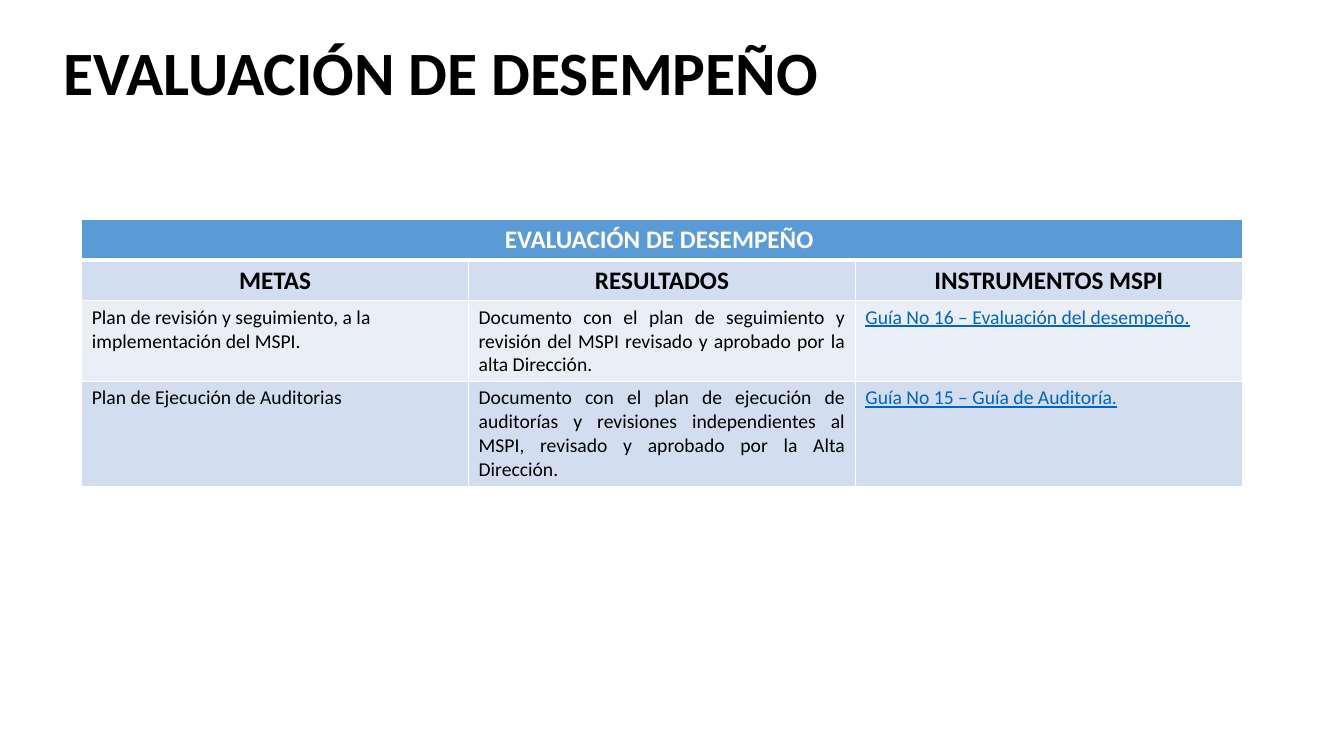
import pptx
import pptx.util
import pptx.dml.color
import pptx.enum.text
import pptx.oxml
import pptx.oxml.ns

ALIGN = pptx.enum.text.PP_ALIGN
COLORS = {
    "black": "000000",
    "white": "FFFFFF",
    "blue": "5B9BD5",
    "mid": "D2DEEF",
    "pale": "EAEFF7",
    "link": "0563C1",
}
HEAD = "EVALUACIÓN DE DESEMPEÑO"
ROWS = [
    [HEAD + " ", "", ""],
    ["METAS", "RESULTADOS", "INSTRUMENTOS MSPI"],
    [
        "Plan de revisión y seguimiento, a la implementación del MSPI.",
        "Documento con el plan de seguimiento y revisión del MSPI revisado y aprobado por la alta Dirección.",
        "Guía No 16 – Evaluación del desempeño.",
    ],
    [
        "Plan de Ejecución de Auditorias",
        "Documento con el plan de ejecución de auditorías y revisiones independientes al MSPI, "
        "revisado y aprobado por la Alta Dirección.",
        "Guía No 15 – Guía de Auditoría.",
    ],
]
FILLS = ["blue", "mid", "pale", "mid"]
HEIGHTS = [5.2, 5.2, 10.67, 14]


class Deck:
    def __init__(self, width, height):
        self.file = pptx.Presentation()
        self.file.slide_width = pptx.util.Inches(width)
        self.file.slide_height = pptx.util.Inches(height)
        self.slide = self.file.slides.add_slide(self.file.slide_layouts[6])
        self.font = "Calibri"

    def col(self, share):
        return round(self.file.slide_width * share / 100)

    def row(self, share):
        return round(self.file.slide_height * share / 100)

    def area(self, left, top, width, height):
        return self.col(left), self.row(top), self.col(width), self.row(height)

    def color(self, name):
        return pptx.dml.color.RGBColor.from_string(COLORS[name])

    def label(self, frame, text, size, color, bold=False, line=False, align=ALIGN.LEFT):
        frame.text = text
        para = frame.paragraphs[0]
        para.alignment = align
        for run in para.runs:
            run.font.name = self.font
            run.font.size = pptx.util.Pt(size)
            run.font.bold = bold
            run.font.underline = line
            run.font.color.rgb = self.color(color)

    def title(self, text, *place):
        frame = self.slide.shapes.add_textbox(*self.area(*place)).text_frame
        frame.word_wrap = True
        self.label(frame, text, 44, "black", bold=True)
        frame.paragraphs[0].line_spacing = 0.9

    def border(self, cell, side, width):
        space = pptx.oxml.ns.nsdecls("a")
        cell._tc.get_or_add_tcPr().append(pptx.oxml.parse_xml(
            f'<a:ln{side} {space} w="{pptx.util.Pt(width)}"><a:solidFill>'
            f'<a:srgbClr val="{COLORS["white"]}"/></a:solidFill></a:ln{side}>'
        ))

    def cell(self, cell, text, r, c):
        if r < 2:
            self.label(cell.text_frame, text, 18, "black" if r else "white",
                       bold=True, align=ALIGN.CENTER)
        else:
            link = c == 2
            self.label(cell.text_frame, text, 14, "link" if link else "black",
                       line=link, align=ALIGN.JUSTIFY if c else ALIGN.LEFT)
        for side in "LRTB":
            heavy = (side, r) in [("B", 0), ("T", 1)]
            self.border(cell, side, 3 if heavy else 1)
        cell.fill.solid()
        cell.fill.fore_color.rgb = self.color(FILLS[r])

    def table(self, rows, left, top, width):
        place = self.area(left, top, width, sum(HEIGHTS))
        table = self.slide.shapes.add_table(len(rows), len(rows[0]), *place).table
        for r, texts in enumerate(rows):
            table.rows[r].height = self.row(HEIGHTS[r])
            for c, text in enumerate(texts):
                self.cell(table.cell(r, c), text, r, c)
        table.cell(0, 0).merge(table.cell(0, len(rows[0]) - 1))


def main():
    deck = Deck(13.33, 7.5)
    deck.title(HEAD, 3.98, 4.93, 86.27, 19.33)
    deck.table(ROWS, 6.08, 29.07, 86.35)
    deck.file.save("out.pptx")


if __name__ == "__main__":
    main()
